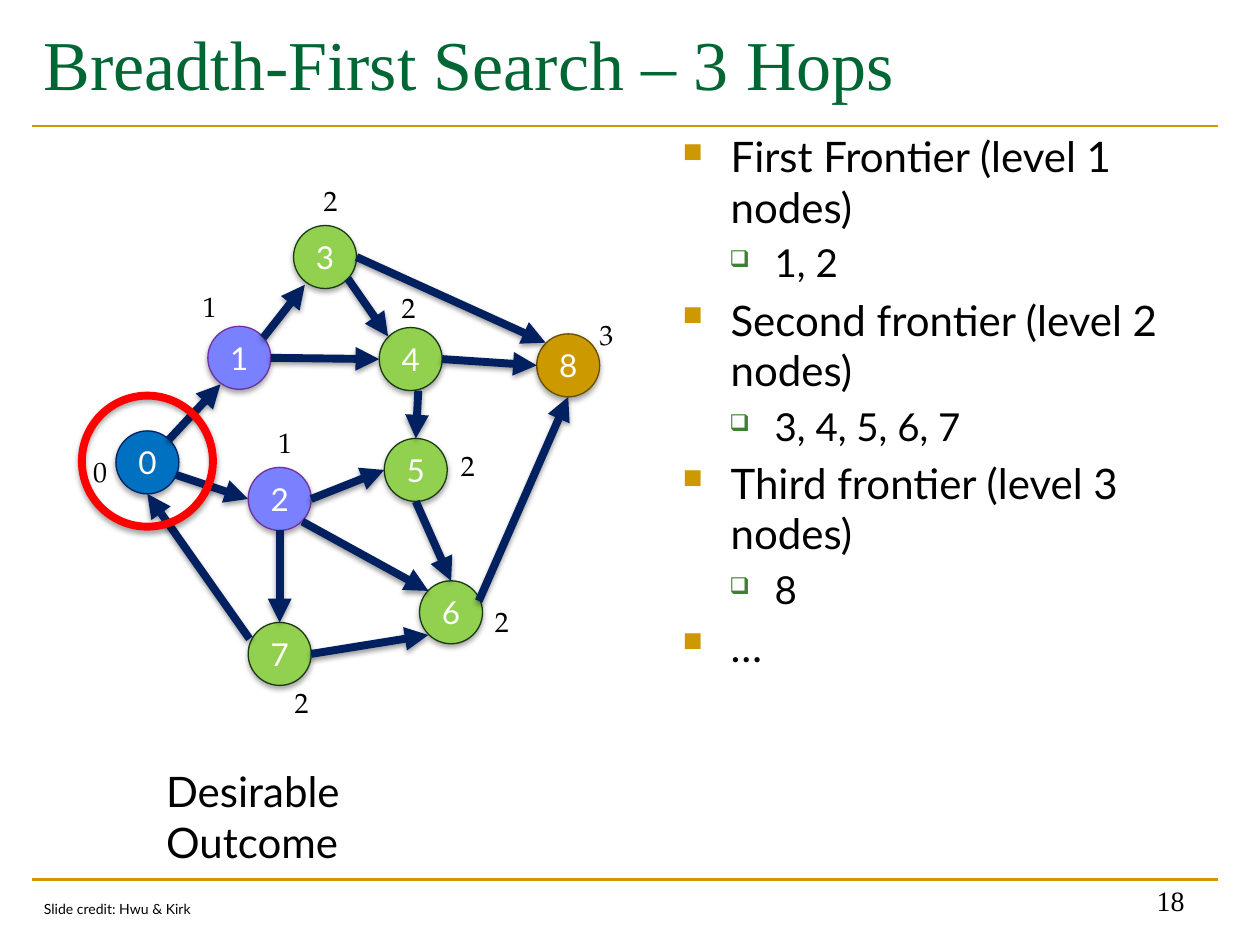
"""Build the breadth-first search slide with its graph and list of frontiers."""
from typing import NamedTuple

from lxml import etree
from pptx import Presentation
from pptx.dml.color import RGBColor
from pptx.enum.shapes import MSO_CONNECTOR, MSO_SHAPE
from pptx.enum.text import MSO_ANCHOR, PP_ALIGN
from pptx.oxml.ns import qn
from pptx.util import Inches, Pt

STRAIGHT = MSO_CONNECTOR.STRAIGHT
OVAL = MSO_SHAPE.OVAL
TOP, MIDDLE, BOTTOM = MSO_ANCHOR.TOP, MSO_ANCHOR.MIDDLE, MSO_ANCHOR.BOTTOM
LEFT, CENTER, RIGHT = PP_ALIGN.LEFT, PP_ALIGN.CENTER, PP_ALIGN.RIGHT

BLACK = RGBColor(0x00, 0x00, 0x00)
WHITE = RGBColor(0xFF, 0xFF, 0xFF)
GREEN = RGBColor(0x00, 0x66, 0x33)
GOLD = RGBColor(0xCC, 0x99, 0x00)
NAVY = RGBColor(0x00, 0x20, 0x60)
RED = RGBColor(0xFF, 0x00, 0x00)
LEAF = RGBColor(0x3B, 0x81, 0x2F)
LEVEL_COLORS = [
    (RGBColor(0x00, 0x70, 0xC0), NAVY),
    (RGBColor(0x7A, 0x81, 0xFF), RGBColor(0x70, 0x30, 0xA0)),
    (RGBColor(0x92, 0xD0, 0x50), RGBColor(0x1A, 0x3A, 0x15)),
    (GOLD, RGBColor(0x66, 0x4D, 0x00)),
]
SANS, SERIF, LABEL_FONT = "Lato", "Times New Roman", "TeX Gyre Pagella"
NODE_SIZE = 0.5


class Node(NamedTuple):
    """A graph vertex with its level and the place of its level label."""
    left: float
    top: float
    level: int
    label_left: float
    label_top: float


class Edge(NamedTuple):
    """A directed edge in inches."""
    x1: float
    y1: float
    x2: float
    y2: float


class Bullet(NamedTuple):
    """The look of one list level."""
    char: str
    color: RGBColor
    percent: int
    margin: float
    indent: float
    size: int


BULLETS = [
    Bullet("■", GOLD, 65, 0.38, -0.38, 24),
    Bullet("❑", LEAF, 60, 0.73, -0.36, 22),
]
NODES = [
    Node(0.92, 3.42, 0, 0.64, 3.56),
    Node(1.65, 2.59, 1, 1.51, 2.25),
    Node(1.97, 3.71, 1, 2.11, 3.33),
    Node(2.33, 1.79, 2, 2.47, 1.41),
    Node(3.01, 2.6, 2, 3.09, 2.26),
    Node(3.05, 3.48, 2, 3.56, 3.51),
    Node(3.33, 4.61, 2, 3.83, 4.75),
    Node(1.97, 4.94, 2, 2.24, 5.39),
    Node(4.26, 2.65, 3, 4.66, 2.47),
]
EDGES = [
    Edge(1.34, 3.49, 1.75, 3.05),
    Edge(1.4, 3.77, 1.97, 3.96),
    Edge(2.09, 2.68, 2.42, 2.26),
    Edge(2.15, 2.84, 3.01, 2.85),
    Edge(2.47, 3.96, 3.05, 3.73),
    Edge(2.83, 2.04, 4.33, 2.72),
    Edge(2.76, 2.21, 3.08, 2.67),
    Edge(3.51, 2.85, 4.26, 2.9),
    Edge(3.32, 3.1, 3.3, 3.48),
    Edge(2.4, 4.14, 3.4, 4.69),
    Edge(2.22, 4.21, 2.22, 4.94),
    Edge(2.47, 5.19, 3.4, 5.04),
    Edge(3.3, 3.98, 3.58, 4.61),
    Edge(1.98, 5.07, 1.17, 3.92),
    Edge(3.8, 4.77, 4.51, 3.15),
]
FRONTIERS = [
    (0, "First Frontier (level 1 nodes)"), (1, "1, 2"),
    (0, "Second frontier (level 2 nodes)"), (1, "3, 4, 5, 6, 7"),
    (0, "Third frontier (level 3 nodes)"), (1, "8"),
    (0, "…"),
]


def set_font(p, name: str, size: int, color: RGBColor) -> None:
    p.font.name, p.font.size = name, Pt(size)
    p.font.color.rgb = color


def add_child(parent, tag: str, **attrs):
    return etree.SubElement(parent, qn(tag), attrs)


def add_shadow(effects, alpha: int, distance: float) -> None:
    shadow = add_child(effects, "a:outerShdw", blurRad=str(Pt(3.1)), dist=str(Pt(distance)),
                       dir="5400000", rotWithShape="0")
    color = add_child(shadow, "a:srgbClr", val=str(BLACK))
    add_child(color, "a:alpha", val=str(alpha * 1000))


def add_line(s, edge: Edge, color: RGBColor, width: float):
    line = s.shapes.add_connector(STRAIGHT, *map(Inches, edge))
    line.line.color.rgb, line.line.width = color, Pt(width)
    return line, add_child(line._element.spPr, "a:effectLst")


def add_arrow(s, edge: Edge) -> None:
    line, effects = add_line(s, edge, NAVY, 4.5)
    add_child(line.line._get_or_add_ln(), "a:tailEnd", type="triangle")
    add_shadow(effects, 38, 1.6)


def add_circle(s, left: float, top: float, size: float, color: RGBColor, width: float):
    sp = s.shapes.add_shape(OVAL, *map(Inches, (left, top, size, size)))
    sp.line.color.rgb, sp.line.width = color, Pt(width)
    sp.shadow.inherit = False
    add_shadow(sp._element.spPr.find(qn("a:effectLst")), 35, 1.8)
    return sp


def add_node(s, number: int, node: Node) -> None:
    fill, outline = LEVEL_COLORS[node.level]
    sp = add_circle(s, node.left, node.top, NODE_SIZE, outline, 0.75)
    sp.fill.solid()
    sp.fill.fore_color.rgb = fill
    tf = sp.text_frame
    tf.vertical_anchor = MIDDLE
    p = tf.paragraphs[0]
    p.text, p.alignment = str(number), CENTER
    set_font(p, SANS, 18, WHITE)


def add_text(s, text: str, box: tuple, font: str, size: int, color: RGBColor = BLACK,
             anchor=TOP, align=LEFT):
    tf = s.shapes.add_textbox(*map(Inches, box)).text_frame
    tf.word_wrap, tf.vertical_anchor = True, anchor
    p = tf.paragraphs[0]
    p.text, p.alignment = text, align
    set_font(p, font, size, color)
    return tf


def add_bullet(p, level: int, text: str) -> None:
    b = BULLETS[level]
    p.text, p.level = text, level
    pPr = p._p.get_or_add_pPr()
    pPr.set("marL", str(Inches(b.margin)))
    pPr.set("indent", str(Inches(b.indent)))
    add_child(add_child(pPr, "a:spcBef"), "a:spcPct", val="20000")
    add_child(add_child(pPr, "a:buClr"), "a:srgbClr", val=str(b.color))
    add_child(pPr, "a:buSzPct", val=str(b.percent * 1000))
    add_child(pPr, "a:buChar", char=b.char)
    set_font(p, SANS, b.size, BLACK)


def main() -> None:
    prs = Presentation()
    prs.slide_width, prs.slide_height = Inches(10), Inches(7.5)
    s = prs.slides.add_slide(prs.slide_layouts[6])
    for y in (6.98, 1):
        add_line(s, Edge(0.25, y, 9.67, y), GOLD, 1.5)
    for number, node in enumerate(NODES):
        add_node(s, number, node)
    for edge in EDGES:
        add_arrow(s, edge)
    for node in NODES:
        add_text(s, str(node.level), (node.label_left, node.label_top, 0.34, 0.37), LABEL_FONT, 16)
    add_circle(s, 0.65, 3.14, 1.04, RED, 4.5).fill.background()

    add_text(s, "Breadth-First Search – 3 Hops", (0.25, 0, 9.42, 0.99), SERIF, 40, GREEN, MIDDLE)
    add_text(s, "18", (7.17, 6.83, 2.33, 0.5), SERIF, 16, anchor=BOTTOM, align=RIGHT)
    add_text(s, "Slide credit: Hwu & Kirk", (0.25, 7.1, 1.39, 0.24), SANS, 8)
    caption = add_text(s, "Desirable Outcome", (1.22, 6.03, 3.01, 0.5), SANS, 24)
    caption.margin_right = Inches(1)

    tf = s.shapes.add_textbox(*map(Inches, (5.32, 0.99, 4.35, 5.98))).text_frame
    tf.word_wrap = True
    for i, (level, text) in enumerate(FRONTIERS):
        add_bullet(tf.add_paragraph() if i else tf.paragraphs[0], level, text)
    prs.save("out.pptx")


if __name__ == "__main__":
    main()
